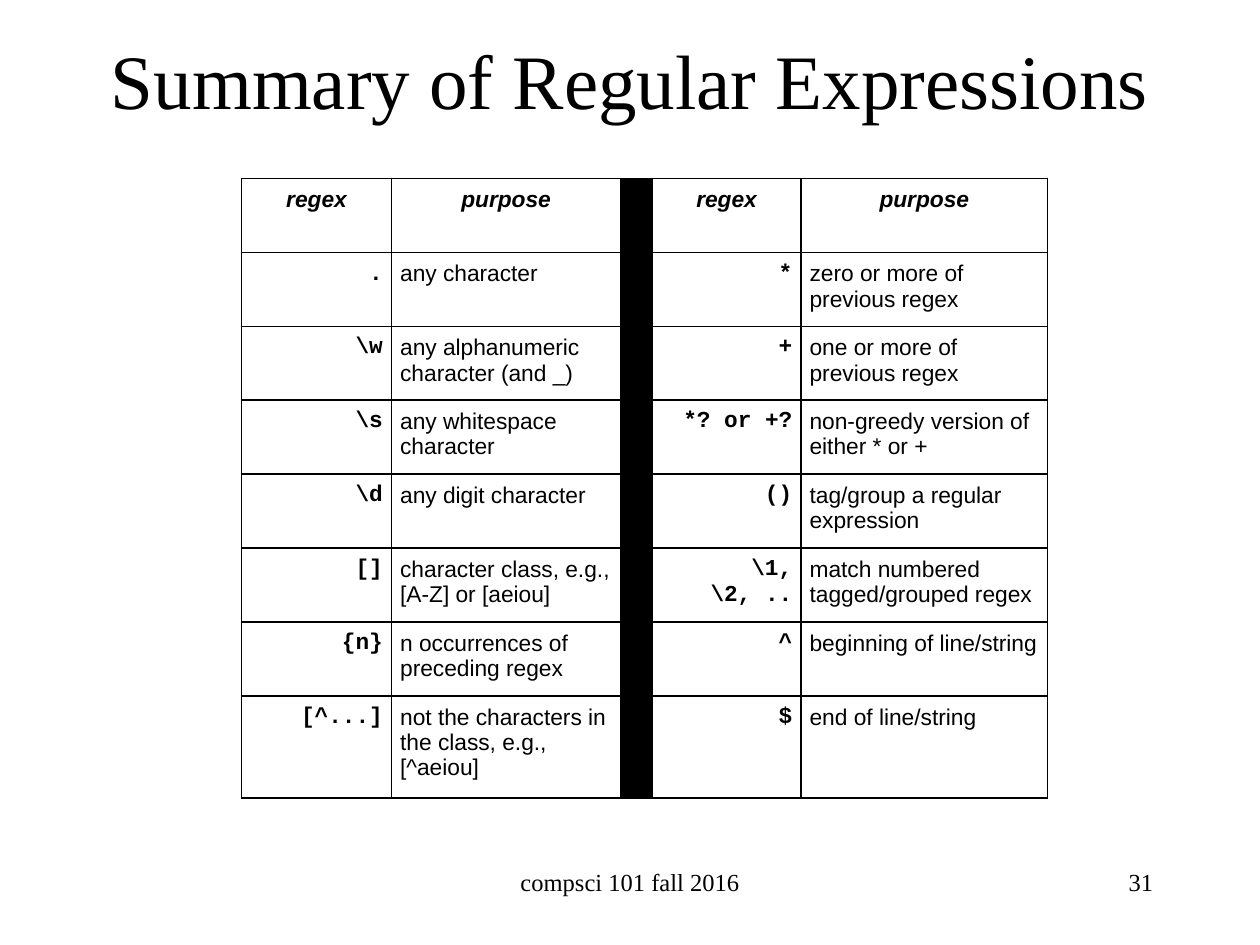
from lxml.etree import SubElement
from pptx import Presentation
from pptx.dml.color import RGBColor
from pptx.enum.text import MSO_ANCHOR, PP_ALIGN
from pptx.oxml.ns import qn
from pptx.util import Pt

BLACK = RGBColor(0, 0, 0)
WHITE = RGBColor(255, 255, 255)

SERIF = {"name": "Times New Roman"}
HEADER = {"name": "Arial", "size": Pt(13), "bold": True, "italic": True}
REGEX = {"name": "Courier New", "size": Pt(13), "bold": True, "italic": False}
PURPOSE = {"name": "Arial", "size": Pt(13), "bold": False, "italic": False}

COLUMN_WIDTHS = [85.7, 131, 18, 85, 141]
ROW_HEIGHTS = [42.25] * 7 + [58.3]
DIVIDER = 2
CELL_INSET = 5

ROWS = [
    ("regex", "purpose", "", "regex", "purpose"),
    (".", "any character", "", "*", "zero or more of previous regex"),
    (r"\w", "any alphanumeric character (and _)", "",
     "+", "one or more of previous regex"),
    (r"\s", "any whitespace character", "",
     "*? or +?", "non-greedy version of either * or +"),
    (r"\d", "any digit character", "", "()", "tag/group a regular expression"),
    ("[]", "character class, e.g., [A-Z] or [aeiou]", "",
     r"\1, \2, ..", "match numbered tagged/grouped regex"),
    ("{n}", "n occurrences of preceding regex", "",
     "^", "beginning of line/string"),
    ("[^...]", "not the characters in the class, e.g., [^aeiou]", "",
     "$", "end of line/string"),
]


def write(frame, text, align, font_values):
    para = frame.paragraphs[0]
    para.alignment = align
    span = para.add_run()
    span.text = text
    span.font.color.rgb = BLACK
    for name, value in font_values.items():
        setattr(span.font, name, value)


def add_text(page, box, text, size, align, anchor=MSO_ANCHOR.TOP):
    frame = page.shapes.add_textbox(*map(Pt, box)).text_frame
    frame.word_wrap = True
    frame.vertical_anchor = anchor
    write(frame, text, align, {**SERIF, "size": Pt(size)})


def add_borders(cell):
    properties = cell._tc.get_or_add_tcPr()
    for position, side in enumerate(("lnL", "lnR", "lnT", "lnB")):
        line = SubElement(properties, qn(f"a:{side}"), w=str(Pt(1)))
        fill = SubElement(line, qn("a:solidFill"))
        SubElement(fill, qn("a:srgbClr"), val=str(BLACK))
        properties.insert(position, line)


def cell_format(row, column):
    """Return the alignment and font values for a place in the table."""
    if row == 0:
        return PP_ALIGN.CENTER, HEADER
    if column in (0, DIVIDER + 1):
        return PP_ALIGN.RIGHT, REGEX
    return PP_ALIGN.LEFT, PURPOSE


def add_regex_table(page, left, top):
    table = page.shapes.add_table(
        len(ROWS), len(COLUMN_WIDTHS), Pt(left), Pt(top),
        Pt(sum(COLUMN_WIDTHS)), Pt(sum(ROW_HEIGHTS))).table
    table.first_row = table.horz_banding = False
    for column, width in zip(table.columns, COLUMN_WIDTHS):
        column.width = Pt(width)
    for row, height in zip(table.rows, ROW_HEIGHTS):
        row.height = Pt(height)
    for r, texts in enumerate(ROWS):
        for c, text in enumerate(texts):
            cell = table.cell(r, c)
            for side in ("left", "right", "top", "bottom"):
                setattr(cell, f"margin_{side}", Pt(CELL_INSET))
            cell.fill.solid()
            cell.fill.fore_color.rgb = BLACK if c == DIVIDER else WHITE
            add_borders(cell)
            if text:
                write(cell.text_frame, text, *cell_format(r, c))


def add_footer(page, top, height):
    add_text(page, (246, top, 228, height), "compsci 101 fall 2016", 14,
             PP_ALIGN.CENTER)
    add_text(page, (516, top, 150, height), "31", 14, PP_ALIGN.RIGHT)


def main():
    deck = Presentation()
    deck.slide_width, deck.slide_height = Pt(720), Pt(540)
    page = deck.slides.add_slide(deck.slide_layouts[6])
    add_text(page, (54, 0, 612, 90), "Summary of Regular Expressions", 44,
             PP_ALIGN.CENTER, MSO_ANCHOR.MIDDLE)
    add_regex_table(page, 138, 102)
    add_footer(page, 492, 36)
    deck.save("out.pptx")


if __name__ == "__main__":
    main()
